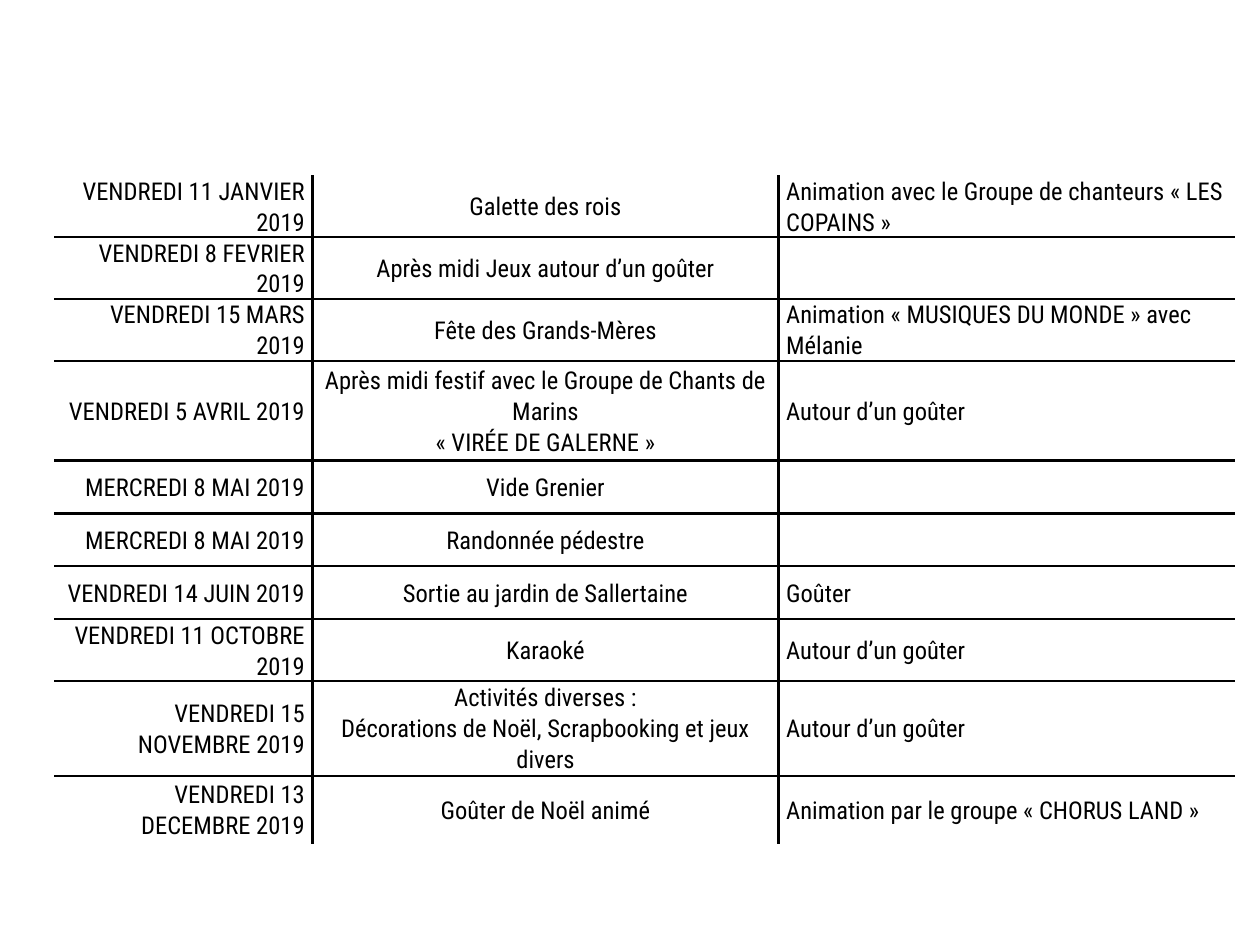
from typing import NamedTuple

from lxml import etree
from pptx import Presentation
from pptx.dml.color import RGBColor
from pptx.enum.text import MSO_ANCHOR, PP_ALIGN
from pptx.oxml.ns import qn
from pptx.util import Inches, Pt

MIDDLE = MSO_ANCHOR.MIDDLE
LEFT, CENTER, RIGHT = PP_ALIGN.LEFT, PP_ALIGN.CENTER, PP_ALIGN.RIGHT

FONT = "Roboto Condensed"
BLACK = "000000"
BLANK_LAYOUT = 6


class Column(NamedTuple):
    width: float
    align: PP_ALIGN


class Event(NamedTuple):
    height: float
    date: str
    activity: str
    detail: str = ""


COLUMNS = [Column(2.05, RIGHT), Column(3.7, CENTER), Column(3.62, LEFT)]
EVENTS = [
    Event(0.47, "VENDREDI 11 JANVIER 2019", "Galette des rois",
          "Animation avec le Groupe de chanteurs « LES COPAINS »"),
    Event(0.39, "VENDREDI 8 FEVRIER 2019", "Après midi Jeux autour d’un goûter"),
    Event(0.47, "VENDREDI 15 MARS 2019", "Fête des Grands-Mères",
          "Animation « MUSIQUES DU MONDE » avec Mélanie"),
    Event(0.79, "VENDREDI 5 AVRIL 2019",
          "Après midi festif avec le Groupe de Chants de Marins\n« VIRÉE DE GALERNE »",
          "Autour d’un goûter"),
    Event(0.42, "MERCREDI 8 MAI 2019", "Vide Grenier"),
    Event(0.42, "MERCREDI 8 MAI 2019", "Randonnée pédestre"),
    Event(0.42, "VENDREDI 14 JUIN 2019", "Sortie au jardin de Sallertaine", "Goûter"),
    Event(0.42, "VENDREDI 11 OCTOBRE 2019", "Karaoké", "Autour d’un goûter"),
    Event(0.75, "VENDREDI 15 NOVEMBRE 2019",
          "Activités diverses :\nDécorations de Noël, Scrapbooking et jeux divers",
          "Autour d’un goûter"),
    Event(0.54, "VENDREDI 13 DECEMBRE 2019", "Goûter de Noël animé",
          "Animation par le groupe « CHORUS LAND »"),
]


def rgb(color: str) -> RGBColor:
    return RGBColor.from_string(color)


def set_border(cell, side: str, visible: bool) -> None:
    tc_pr = cell._tc.get_or_add_tcPr()
    ln = etree.SubElement(tc_pr, qn(f"a:ln{side}"), w=str(Pt(1.5)))
    if visible:
        fill = etree.SubElement(ln, qn("a:solidFill"))
        etree.SubElement(fill, qn("a:srgbClr"), val=BLACK)
    else:
        etree.SubElement(ln, qn("a:noFill"))


def write_cell(cell, text: str, align: PP_ALIGN) -> None:
    cell.vertical_anchor = MIDDLE
    cell.margin_left = cell.margin_right = Inches(0.06)
    cell.margin_top = cell.margin_bottom = 0
    p = cell.text_frame.paragraphs[0]
    p.text = text
    p.alignment = align
    p.line_spacing = 1.07
    p.space_after = Pt(6)
    p.font.name = FONT
    p.font.size = Pt(14)
    p.font.color.rgb = rgb(BLACK)


def add_calendar(slide, left: float, top: float) -> None:
    """Draw the events with lines between cells only, none around the table."""
    width = sum(column.width for column in COLUMNS)
    height = sum(event.height for event in EVENTS)
    last_row, last_col = len(EVENTS) - 1, len(COLUMNS) - 1
    table = slide.shapes.add_table(
        len(EVENTS), len(COLUMNS),
        Inches(left), Inches(top), Inches(width), Inches(height)).table
    table.first_row = table.horz_banding = False
    for c, column in enumerate(COLUMNS):
        table.columns[c].width = Inches(column.width)
    for r, event in enumerate(EVENTS):
        table.rows[r].height = Inches(event.height)
        texts = (event.date, event.activity, event.detail)
        for c, (column, text) in enumerate(zip(COLUMNS, texts)):
            cell = table.cell(r, c)
            write_cell(cell, text, column.align)
            set_border(cell, "L", c > 0)
            set_border(cell, "R", c < last_col)
            set_border(cell, "T", r > 0)
            set_border(cell, "B", r < last_row)
            cell.fill.background()


def main() -> None:
    prs = Presentation()
    prs.slide_width, prs.slide_height = Inches(10), Inches(7.5)
    slide = prs.slides.add_slide(prs.slide_layouts[BLANK_LAYOUT])
    add_calendar(slide, left=0.43, top=1.39)
    prs.save("out.pptx")


if __name__ == "__main__":
    main()
